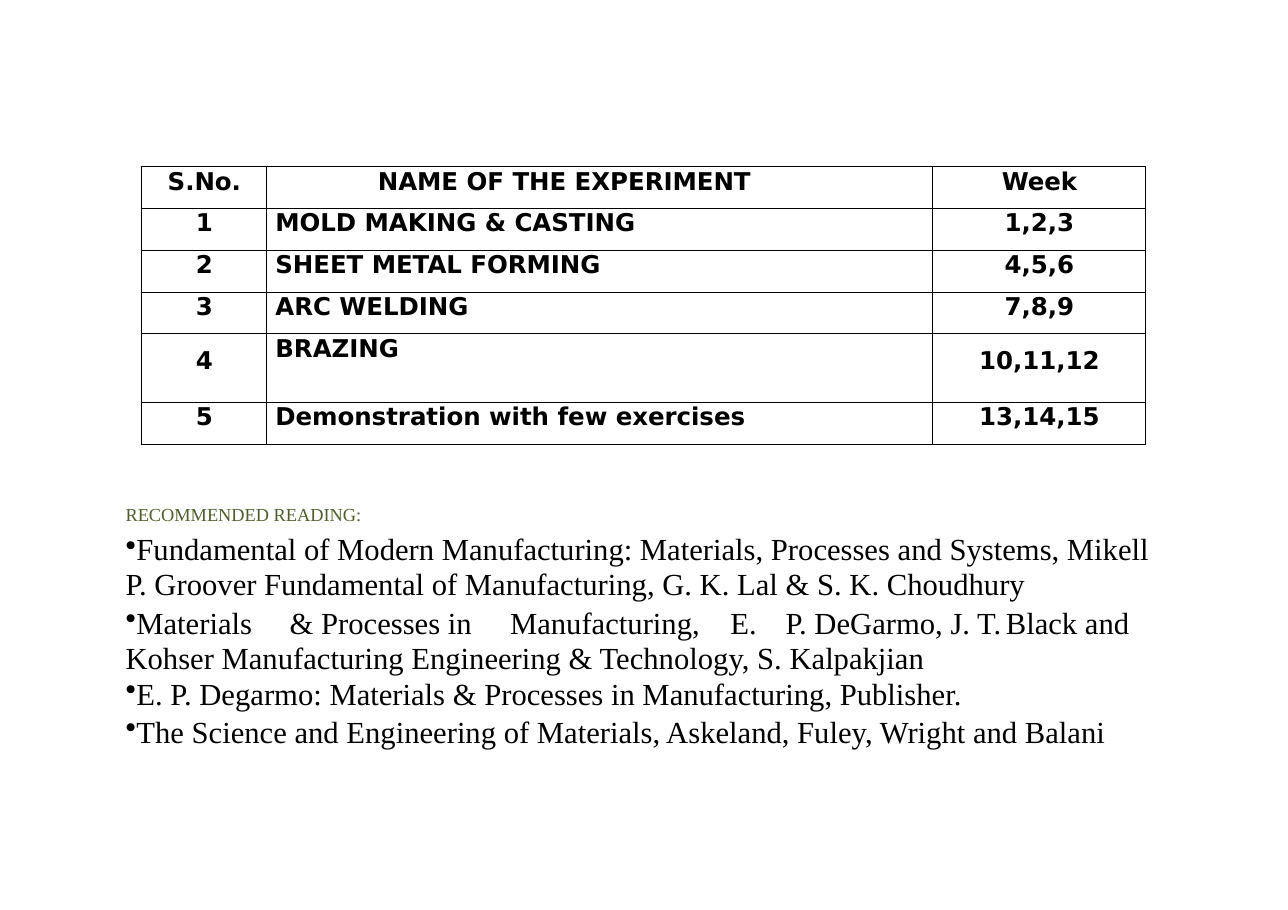
from lxml.etree import SubElement
from pptx import Presentation
from pptx.dml.color import RGBColor
from pptx.enum.text import MSO_AUTO_SIZE, PP_ALIGN
from pptx.oxml.ns import qn
from pptx.util import Emu, Pt

EMU_PER_PX = 9144  # 100 px to the inch
COLORS = {"text": "000000", "heading": "4F6028", "border": "000000"}
TABLE_FONT = "DejaVu Sans"
READING_FONT = "Times New Roman"

COLUMN_WIDTHS = [114, 604, 194]
ROW_HEIGHT = 38
TALL_ROW_HEIGHT = 62
TALL_ROW = 4
EXPERIMENTS = [
    ("S.No.", "NAME OF THE EXPERIMENT", "Week"),
    ("1", "MOLD MAKING & CASTING", "1,2,3"),
    ("2", "SHEET METAL FORMING", "4,5,6"),
    ("3", "ARC WELDING", "7,8,9"),
    ("4", "BRAZING", "10,11,12"),
    ("5", "Demonstration with few exercises", "13,14,15"),
]

# Text, line spacing, space before in points
READINGS = [
    ("Fundamental of Modern Manufacturing: Materials, Processes and Systems, "
     "Mikell P. Groover Fundamental of Manufacturing, G. K. Lal & S. K. Choudhury",
     0.95, 4.4),
    ("Materials\t& Processes in\tManufacturing,\tE.\tP. DeGarmo, J. T.\t"
     "Black and Kohser Manufacturing Engineering & Technology, S. Kalpakjian",
     Pt(23), 2),
    ("E. P. Degarmo: Materials & Processes in Manufacturing, Publisher.",
     Pt(23.8), 0),
    ("The Science and Engineering of Materials, Askeland, Fuley, Wright and Balani",
     1.0, 0.5),
]


def px(length):
    return Emu(length * EMU_PER_PX)


def set_font(paragraph, name, size, color, bold=False):
    font = paragraph.font
    font.name = name
    font.size = Pt(size)
    font.bold = bold
    font.color.rgb = RGBColor.from_string(COLORS[color])


def set_indent(paragraph, left):
    properties = paragraph._p.get_or_add_pPr()
    properties.set("marL", str(px(left)))
    properties.set("indent", "0")


def add_bullet(paragraph):
    """Call before setting the font, which must follow the bullet in the XML."""
    properties = paragraph._p.get_or_add_pPr()
    SubElement(properties, qn("a:buChar")).set("char", "•")


def set_margins(frame, top):
    frame.margin_left = frame.margin_right = frame.margin_bottom = 0
    frame.margin_top = px(top)


def set_borders(cell):
    properties = cell._tc.get_or_add_tcPr()
    for position, side in enumerate(("a:lnL", "a:lnR", "a:lnT", "a:lnB")):
        line = SubElement(properties, qn(side), w=str(Pt(0.5)))
        fill = SubElement(line, qn("a:solidFill"))
        SubElement(fill, qn("a:srgbClr"), val=COLORS["border"])
        properties.insert(position, line)


def fill_cell(cell, text, row, column):
    is_name = column == 1
    lowered = row == TALL_ROW and not is_name
    cell.fill.background()
    set_borders(cell)
    set_margins(cell, 12 if lowered else 1)
    paragraph = cell.text_frame.paragraphs[0]
    paragraph.text = text
    paragraph.alignment = PP_ALIGN.LEFT if is_name else PP_ALIGN.CENTER
    paragraph.space_before = Pt(8.8 if lowered else 0.5)
    name_indent = 101 if row == 0 else 8
    set_indent(paragraph, name_indent if is_name else 1)
    set_font(paragraph, TABLE_FONT, 16, "text", bold=True)


def add_experiment_table(slide, left, top):
    heights = [TALL_ROW_HEIGHT if row == TALL_ROW else ROW_HEIGHT
               for row in range(len(EXPERIMENTS))]
    table = slide.shapes.add_table(
        len(EXPERIMENTS), len(COLUMN_WIDTHS), px(left), px(top),
        px(sum(COLUMN_WIDTHS)), px(sum(heights))).table
    table.first_row = table.horz_banding = False
    for column, width in zip(table.columns, COLUMN_WIDTHS):
        column.width = px(width)
    for row, (height, texts) in enumerate(zip(heights, EXPERIMENTS)):
        table.rows[row].height = px(height)
        for column, text in enumerate(texts):
            fill_cell(table.cell(row, column), text, row, column)


def add_reading_list(slide, left, top, width, height):
    frame = slide.shapes.add_textbox(
        px(left), px(top), px(width), px(height)).text_frame
    frame.word_wrap = True
    frame.auto_size = MSO_AUTO_SIZE.SHAPE_TO_FIT_TEXT
    set_margins(frame, 4)
    heading = frame.paragraphs[0]
    heading.text = "RECOMMENDED READING:"
    heading.space_before = Pt(2.9)
    set_indent(heading, 1)
    set_font(heading, READING_FONT, 12, "heading")
    for text, line_spacing, space_before in READINGS:
        paragraph = frame.add_paragraph()
        paragraph.text = text
        set_indent(paragraph, 1)
        add_bullet(paragraph)
        paragraph.line_spacing = line_spacing
        paragraph.space_before = Pt(space_before)
        set_font(paragraph, READING_FONT, 20, "text")


def main():
    presentation = Presentation()
    presentation.slide_width = px(1169)
    presentation.slide_height = px(826)
    slide = presentation.slides.add_slide(presentation.slide_layouts[6])
    add_experiment_table(slide, 128, 151)
    add_reading_list(slide, 113, 453, 933, 260)
    presentation.save("out.pptx")


if __name__ == "__main__":
    main()
